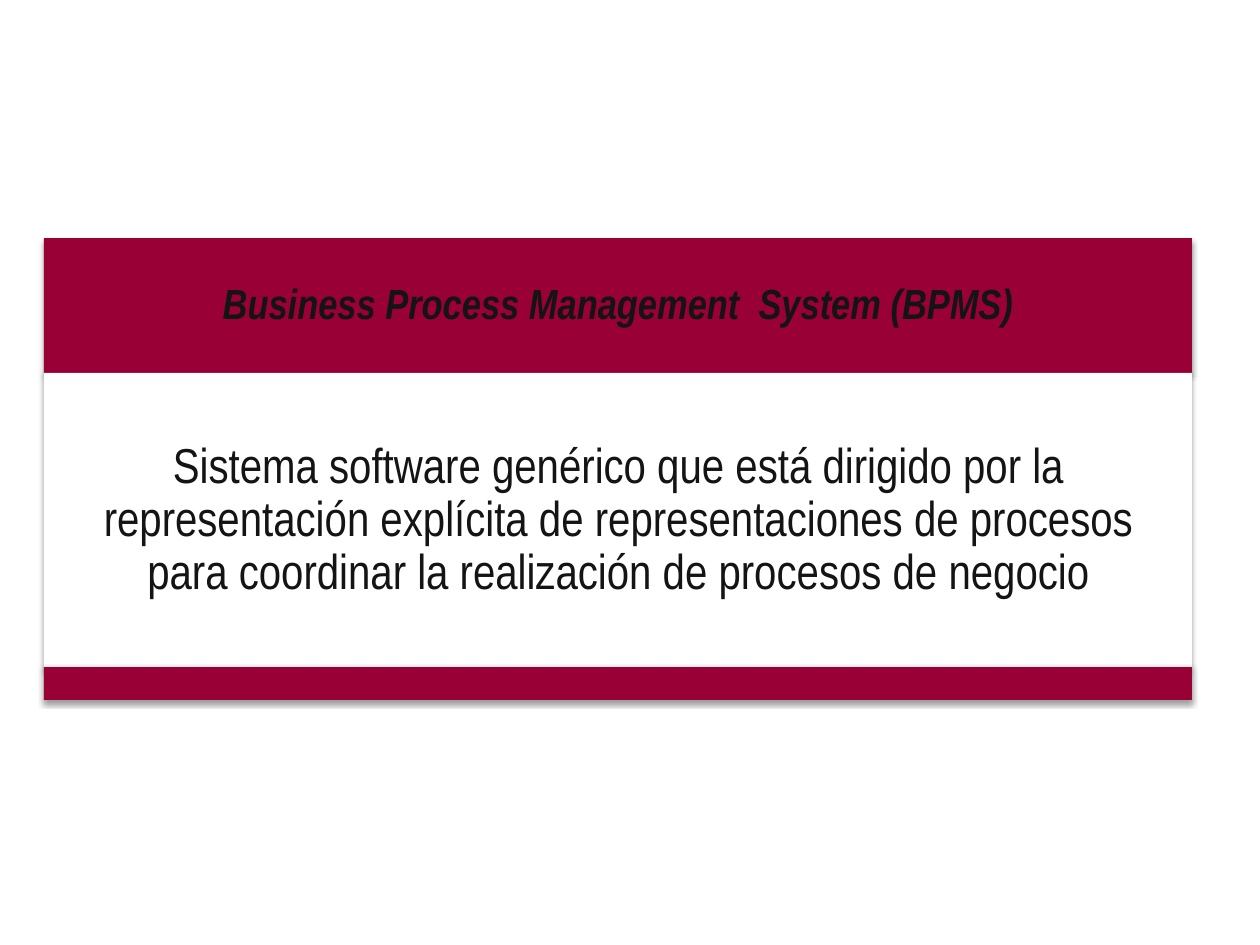
from lxml import etree
from pptx import Presentation
from pptx import util as u
from pptx.dml.color import RGBColor
from pptx.enum import shapes, text
from pptx.oxml import ns

WINE = RGBColor(0x98, 0x00, 0x36)
WHITE = RGBColor(0xFF, 0xFF, 0xFF)
INK = RGBColor(0x14, 0x14, 0x14)
FONT = "Arial Narrow"


def px(n):
    """Turn pixels into EMU at 126 to the inch."""
    return u.Emu(round(n * 914400 / 126))


def shade(shape):
    """Give a shape a soft shadow straight below it."""
    shape.shadow.inherit = False
    effects = shape._element.spPr.find(ns.qn("a:effectLst"))
    outer = etree.SubElement(
        effects, ns.qn("a:outerShdw"), blurRad=str(u.Pt(3.1)),
        dist=str(u.Pt(1.6)), dir="5400000", rotWithShape="0")
    color = etree.SubElement(outer, ns.qn("a:srgbClr"), val="000000")
    etree.SubElement(color, ns.qn("a:alpha"), val="38000")


def band(slide, box, fill):
    """Draw a filled band with a shadow."""
    shape = slide.shapes.add_shape(
        shapes.MSO_SHAPE.RECTANGLE, *[px(n) for n in box])
    shape.fill.solid()
    shape.fill.fore_color.rgb = fill
    shape.line.fill.background()
    shade(shape)
    return shape


def write(shape, words, size, inset, bold=False, italic=False):
    """Write centred text in a shape."""
    frame = shape.text_frame
    frame.word_wrap = True
    frame.vertical_anchor = text.MSO_ANCHOR.MIDDLE
    frame.margin_left = frame.margin_right = px(inset)
    frame.margin_top = frame.margin_bottom = px(inset)
    para = frame.paragraphs[0]
    para.alignment = text.PP_ALIGN.CENTER
    para.line_spacing = 0.9
    run = para.add_run()
    run.text = words
    font = run.font
    font.name, font.size, font.color.rgb = FONT, u.Pt(size), INK
    font.bold, font.italic = bold, italic


def card(slide, box, title, body):
    """Stack a title band, a body and a foot band in a box."""
    left, top, width, height = box
    head, mid, foot = 135, 296, 33
    write(band(slide, (left, top, width, head), WINE),
          title, 24, 13, bold=True, italic=True)
    write(band(slide, (left, top + head, width, mid), WHITE), body, 28, 15)
    band(slide, (left, top + height - foot, width, foot), WINE)


def main():
    """Build and save the slide."""
    deck = Presentation()
    deck.slide_width, deck.slide_height = px(1260), px(945)
    slide = deck.slides.add_slide(deck.slide_layouts[6])
    card(slide, (44, 238, 1148, 462),
         "Business Process Management  System (BPMS)",
         "Sistema software genérico que está dirigido por la representación "
         "explícita de representaciones de procesos para coordinar la "
         "realización de procesos de negocio")
    deck.save("out.pptx")


if __name__ == "__main__":
    main()
